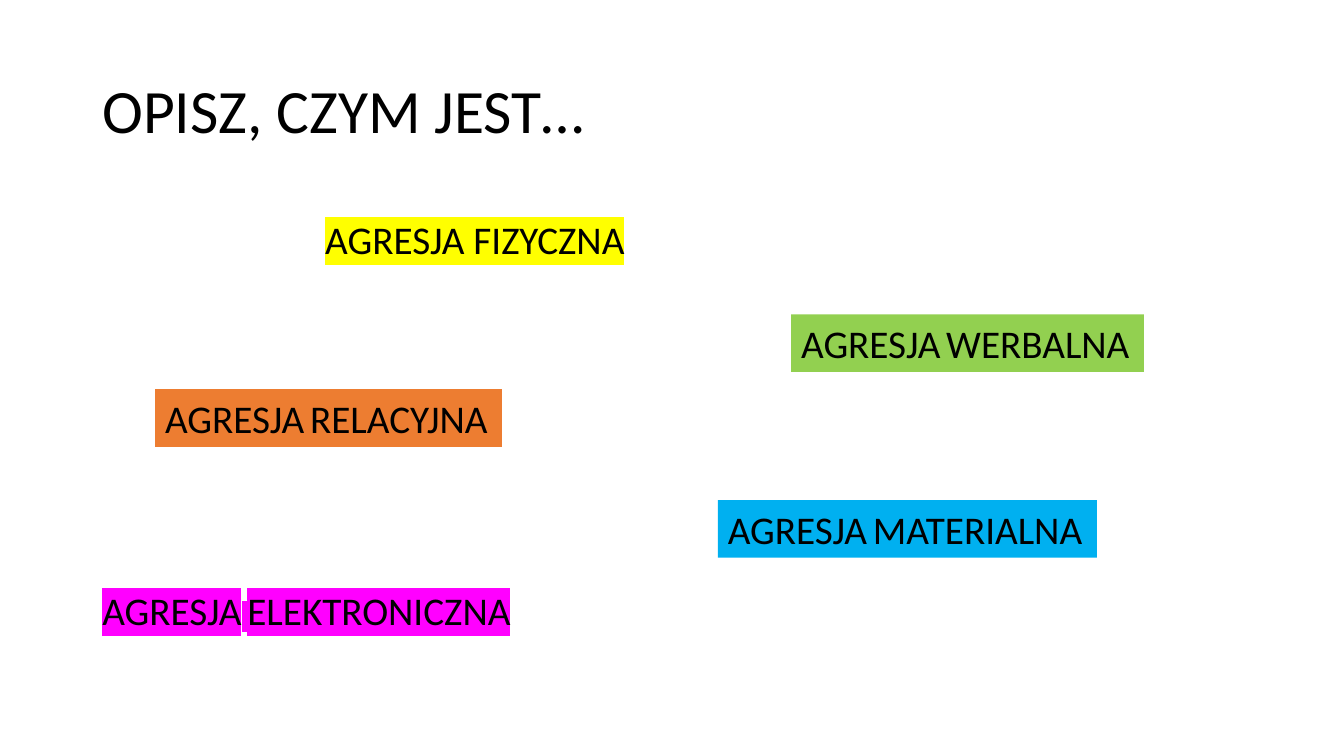
from lxml import etree
from pptx import Presentation
from pptx.dml.color import RGBColor
from pptx.enum.shapes import MSO_SHAPE
from pptx.enum.text import MSO_ANCHOR, PP_ALIGN
from pptx.oxml.ns import qn
from pptx.util import Pt

RECTANGLE = MSO_SHAPE.RECTANGLE
LEFT = PP_ALIGN.LEFT
TOP = MSO_ANCHOR.TOP
MIDDLE = MSO_ANCHOR.MIDDLE


def color(hex_string):
    return RGBColor.from_string(hex_string)


def add_run(paragraph, text, *, size, font, ink, highlight=None):
    run = paragraph.add_run()
    run.text = text
    run.font.size = Pt(size)
    run.font.name = font
    run.font.color.rgb = color(ink)
    if highlight:
        marker = etree.Element(qn("a:highlight"))
        etree.SubElement(marker, qn("a:srgbClr"), val=highlight)
        latin = run.font._element.find(qn("a:latin"))
        latin.addprevious(marker)


class SlideBuilder:
    font = "Calibri"
    ink = "000000"
    title_size = 44
    label_size = 28
    space_size = 18

    def __init__(self, slide):
        self.slide = slide

    def fill_text(self, shape, pieces, *, line_spacing=1.0, anchor=TOP, highlight=None):
        frame = shape.text_frame
        frame.word_wrap = True
        frame.vertical_anchor = anchor
        paragraph = frame.paragraphs[0]
        paragraph.alignment = LEFT
        paragraph.line_spacing = line_spacing
        for text, size in pieces:
            add_run(paragraph, text, size=size, font=self.font, ink=self.ink,
                    highlight=highlight)

    def text_box(self, box, pieces, **text_format):
        shape = self.slide.shapes.add_textbox(*map(Pt, box))
        self.fill_text(shape, pieces, **text_format)

    def filled_label(self, box, pieces, fill):
        shape = self.slide.shapes.add_shape(RECTANGLE, *map(Pt, box))
        shape.shadow.inherit = False
        shape.fill.solid()
        shape.fill.fore_color.rgb = color(fill)
        shape.line.fill.background()
        self.fill_text(shape, pieces)

    def aggression(self, kind):
        return [("AGRESJA", self.label_size), (" ", self.space_size),
                (kind, self.label_size)]


def main():
    presentation = Presentation()
    presentation.slide_width = Pt(960)
    presentation.slide_height = Pt(540)
    slide = presentation.slides.add_slide(presentation.slide_layouts[6])
    builder = SlideBuilder(slide)

    builder.text_box((66, 28.75, 828, 104.4),
                     [("OPISZ, CZYM JEST…", builder.title_size)],
                     line_spacing=0.9, anchor=MIDDLE)
    builder.text_box((225.2, 154, 241.2, 49.7),
                     [("AGRESJA FIZYCZNA", builder.label_size)],
                     line_spacing=0.9, highlight="FFFF00")

    label_height = 41.2
    for kind, left, top, width, fill in (
        ("RELACYJNA", 110.8, 278, 247.7, "ED7D31"),
        ("WERBALNA", 565.2, 224.5, 252, "92D050"),
        ("MATERIALNA", 512.8, 357.2, 270.7, "00B0F0"),
    ):
        builder.filled_label((left, top, width, label_height),
                             builder.aggression(kind), fill)

    builder.text_box((66, 415, 318.2, label_height),
                     builder.aggression("ELEKTRONICZNA"), highlight="FF00FF")

    presentation.save("out.pptx")


if __name__ == "__main__":
    main()
